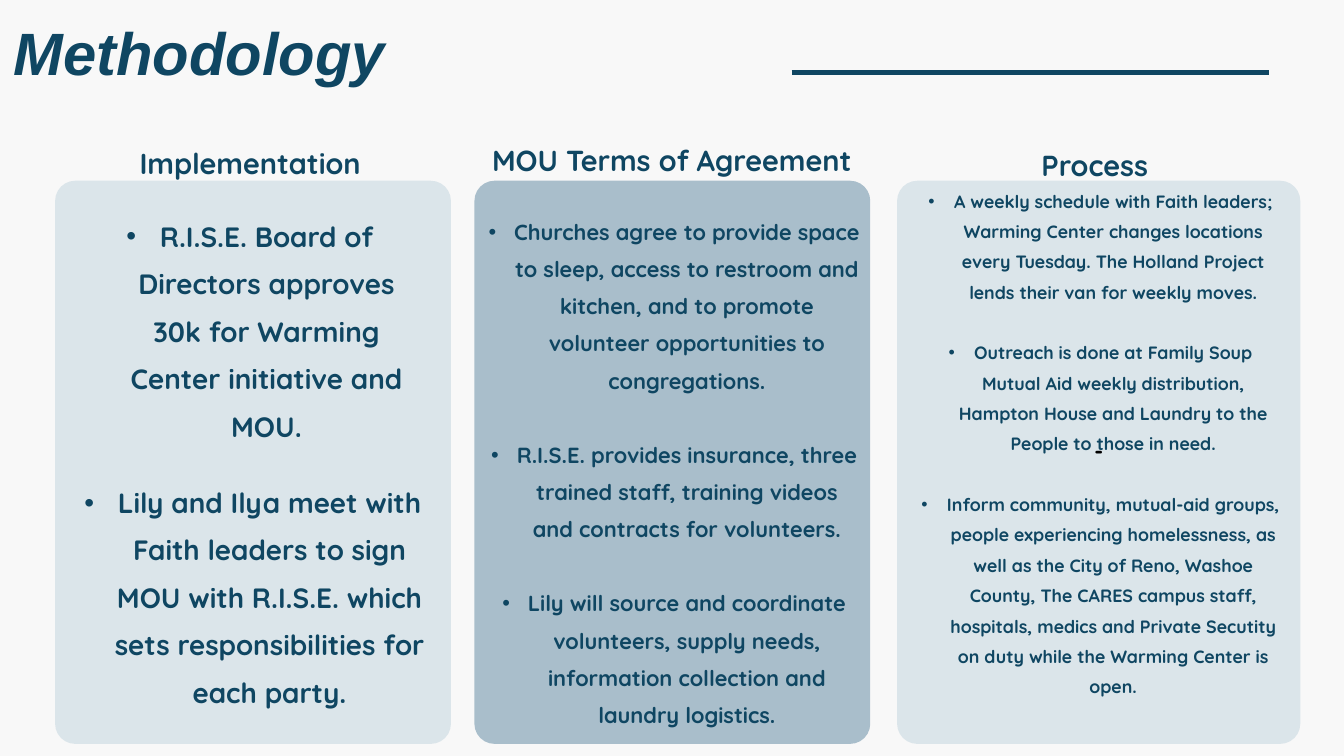
from pptx import Presentation
from pptx.dml.color import RGBColor
from pptx.enum.shapes import MSO_CONNECTOR, MSO_SHAPE
from pptx.enum.text import MSO_ANCHOR, MSO_AUTO_SIZE, PP_ALIGN
from pptx.oxml.ns import qn
from pptx.util import Inches, Pt
from lxml.etree import SubElement

WIDE, HIGH = Inches(20), Inches(11.25)
NAVY, PALE, BLUE = "0F4662", "DBE5EA", "A9BECB"
FONT = "Quicksand"

CARDS = [(4.1, 29.45, PALE), (35.3, 29.45, BLUE), (66.75, 30, PALE)]
HEADS = [
    ("Implementation", 4.65, 18.49, 27.9),
    ("MOU Terms of Agreement", 35.55, 18.04, 28.85),
    ("Process", 67.5, 18.76, 27.9),
]
LISTS = [
    ((7.1, 27.2, 22.95, 30.84), 29.9, 50.8, 0.5, [
        "R.I.S.E. Board of Directors approves 30k for Warming Center initiative and MOU.",
    ]),
    ((5.85, 62.4, 25.9, 31.11), 29.9, 50.8, 0.5, [
        "Lily and Ilya meet with Faith leaders to sign MOU with R.I.S.E. which sets "
        "responsibilities for each party.",
    ]),
    ((36.35, 27.47, 27.6, 69.24), 23.4, 39.8, 0.38, [
        "Churches agree to provide space to sleep, access to restroom and kitchen, "
        "and to promote volunteer opportunities to congregations.",
        "R.I.S.E. provides insurance, three trained staff, training videos and "
        "contracts for volunteers.",
        "Lily will source and coordinate volunteers, supply needs, information "
        "collection and laundry logistics.",
    ]),
    ((68.35, 24, 27.05, 69.51), 19.1, 32.5, 0.38, [
        "A weekly schedule with Faith leaders; Warming Center changes locations every "
        "Tuesday. The Holland Project lends their van for weekly moves.",
        "Outreach is done at Family Soup Mutual Aid weekly distribution, Hampton House "
        "and Laundry to the People to those in need.",
        "Inform community, mutual-aid groups, people experiencing homelessness, as well "
        "as the City of Reno, Washoe County, The CARES campus staff, hospitals, medics "
        "and Private Secutity on duty while the Warming Center is open.",
    ]),
]


def paint(color, code):
    color.rgb = RGBColor.from_string(code)


def across(share):
    return round(WIDE * share / 100)


def down(share):
    return round(HIGH * share / 100)


def place(x, y, w, h):
    return across(x), down(y), across(w), down(h)


def add_card(slide, x, w, code):
    card = slide.shapes.add_shape(MSO_SHAPE.ROUNDED_RECTANGLE, *place(x, 23.91, w, 74.49))
    card.adjustments[0] = Inches(0.3) / card.width
    card.shadow.inherit = False
    card.fill.solid()
    paint(card.fill.fore_color, code)
    card.line.fill.background()


def add_text(slide, box, lines, size, pitch, code=NAVY, face=FONT, align=PP_ALIGN.CENTER):
    frame = slide.shapes.add_textbox(*place(*box)).text_frame
    frame.word_wrap = True
    frame.auto_size = MSO_AUTO_SIZE.SHAPE_TO_FIT_TEXT
    frame.margin_left = frame.margin_right = 0
    frame.margin_top = frame.margin_bottom = 0
    frame.text = "\n".join(lines)
    for para in frame.paragraphs:
        para.alignment = align
        para.line_spacing = Pt(pitch)
        for run in para.runs:
            run.font.name = face
            run.font.size = Pt(size)
            run.font.bold = True
            paint(run.font.color, code)
    return frame


def add_list(slide, box, size, pitch, indent, lines):
    frame = add_text(slide, box, lines, size, pitch)
    for rank, para in enumerate(frame.paragraphs):
        if rank:
            para.space_before = Pt(pitch)
        props = para._p.get_or_add_pPr()
        props.set("marL", str(Inches(indent)))
        props.set("indent", str(-Inches(indent)))
        SubElement(props, qn("a:buFont")).set("typeface", "Arial")
        SubElement(props, qn("a:buChar")).set("char", "•")


def add_rule(slide, start, end, y):
    rule = slide.shapes.add_connector(
        MSO_CONNECTOR.STRAIGHT, across(start), down(y), across(end), down(y))
    rule.line.width = Pt(6)
    paint(rule.line.color, NAVY)
    SubElement(rule._element.spPr, qn("a:effectLst"))


def main():
    deck = Presentation()
    deck.slide_width, deck.slide_height = WIDE, HIGH
    slide = deck.slides.add_slide(deck.slide_layouts[6])
    slide.background.fill.solid()
    paint(slide.background.fill.fore_color, "F8F8F8")
    for card in CARDS:
        add_card(slide, *card)
    dash = add_text(slide, (66.75, 19.29, 30, 79.02), ["-"], 24, 40.8, "000000")
    dash.auto_size = MSO_AUTO_SIZE.NONE
    dash.vertical_anchor = MSO_ANCHOR.MIDDLE
    title = add_text(slide, (1, 0.53, 44.4, 11.56), ["Methodology"], 64, 89.6,
                     face="Arial", align=PP_ALIGN.LEFT)
    title.paragraphs[0].runs[0].font.italic = True
    for label, x, y, w in HEADS:
        add_text(slide, (x, y, w, 5.16), [label], 31, 43.4)
    for item in LISTS:
        add_list(slide, *item)
    add_rule(slide, 58.9, 94.4, 9.6)
    deck.save("out.pptx")


if __name__ == "__main__":
    main()
